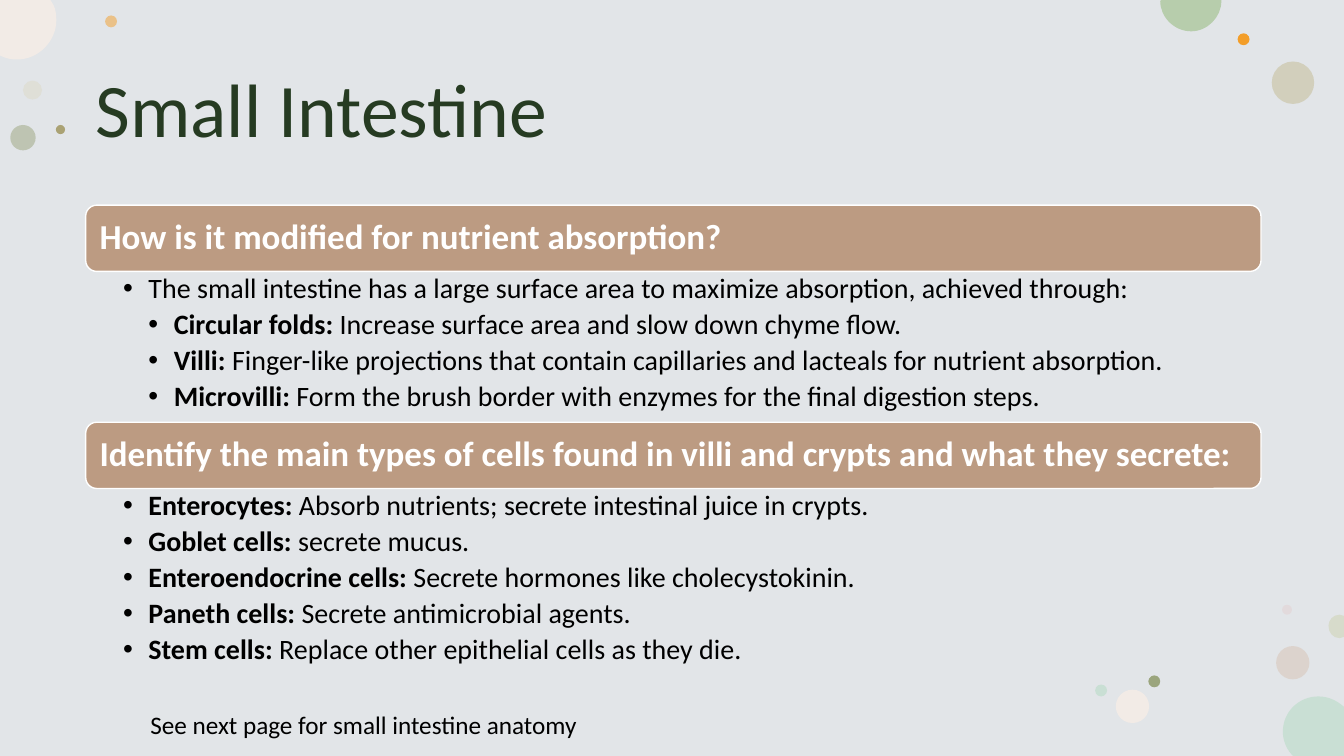
"""Build the Small Intestine slide: two headed lists among scattered dots."""
from dataclasses import dataclass

import lxml.etree
import pptx
import pptx.dml.color
import pptx.enum.shapes
import pptx.enum.text
import pptx.oxml.ns
import pptx.util

Cm, Pt = pptx.util.Cm, pptx.util.Pt
ANCHOR = pptx.enum.text.MSO_ANCHOR
SHAPE = pptx.enum.shapes.MSO_SHAPE
qn = pptx.oxml.ns.qn

TITLE = "Small Intestine"
NOTE = "See next page for small intestine anatomy"
SECTIONS = [
    ("How is it modified for nutrient absorption?", 3.8, [
        (0, "", "The small intestine has a large surface area to maximize absorption, achieved through:"),
        (1, "Circular folds:", "Increase surface area and slow down chyme flow."),
        (1, "Villi:", "Finger-like projections that contain capillaries and lacteals for nutrient absorption."),
        (1, "Microvilli:", "Form the brush border with enzymes for the final digestion steps."),
    ]),
    ("Identify the main types of cells found in villi and crypts and what they secrete:", 4.75, [
        (0, "Enterocytes:", "Absorb nutrients; secrete intestinal juice in crypts."),
        (0, "Goblet cells:", "secrete mucus."),
        (0, "Enteroendocrine cells:", "Secrete hormones like cholecystokinin."),
        (0, "Paneth cells:", "Secrete antimicrobial agents."),
        (0, "Stem cells:", "Replace other epithelial cells as they die."),
    ]),
]
DOTS = [
    (0.58, 2.03, 0.48, "DDDAC7", 50),
    (2.65, 0.39, 0.3, "F39E29", 50),
    (32.16, 16.28, 0.84, "D7C3B4", 50),
    (0.26, 3.15, 0.64, "9BA57D", 50),
    (32.05, 1.55, 1.07, "CCC7AC", 72),
    (31.19, 0.84, 0.3, "F39E29", 100),
    (32.31, 15.24, 0.25, "E3BEBE", 28),
    (28.94, 17.02, 0.3, "9BA57D", 100),
    (28.12, 17.38, 0.84, "F2EBE6", 100),
    (27.6, 17.25, 0.3, "C9DFD4", 100),
    (1.41, 3.15, 0.23, "AAA274", 100),
]
CUT_DOTS = [
    ("C9DFD4", (33.22, 17.55), [
        [(33.48, 17.55), (33.68, 17.65), (33.87, 17.81)],
        [(33.87, 19.05)], [(32.59, 19.05)], [(32.54, 19.0)],
        [(32.41, 18.85), (32.33, 18.64), (32.33, 18.44)],
        [(32.33, 17.93), (32.74, 17.55), (33.22, 17.55)]]),
    ("F2EBE6", (0, 0), [
        [(1.27, 0)], [(1.35, 0.13)],
        [(1.4, 0.23), (1.42, 0.36), (1.42, 0.51)],
        [(1.42, 1.04), (0.97, 1.5), (0.43, 1.5)],
        [(0.28, 1.5), (0.15, 1.47), (0.05, 1.42)], [(0, 1.4)]]),
    ("B7CDAC", (29.26, 0), [
        [(30.78, 0)], [(30.78, 0.03)],
        [(30.78, 0.43), (30.43, 0.79), (30.02, 0.79)],
        [(29.59, 0.79), (29.24, 0.43), (29.24, 0.03)]]),
    ("D7DBCB", (33.76, 15.49), [
        [(33.87, 15.52)], [(33.87, 16.05)], [(33.76, 16.08)],
        [(33.6, 16.08), (33.48, 15.95), (33.48, 15.77)],
        [(33.48, 15.62), (33.6, 15.49), (33.76, 15.49)]]),
]
WIDTH, HEIGHT = 33.87, 19.05
LEFT, SPAN = 2.16, 29.62
BAR_TOP, BAR_HEIGHT = 5.17, 1.67
INDENT = 0.64
NBSP = chr(160)


@dataclass(frozen=True)
class Theme:
    """Colours, font and type sizes."""
    font: str = "Calibri"
    back: str = "E2E5E8"
    title: str = "263B22"
    bar: str = "BC9B82"
    light: str = "FFFFFF"
    ink: str = "000000"
    title_size: int = 54
    bar_size: int = 25
    list_size: int = 20
    note_size: int = 18


THEME = Theme()


def rgb(value):
    """Turn a hex string into a colour."""
    return pptx.dml.color.RGBColor.from_string(value)


def paint(sp, color, line=None, alpha=100):
    """Fill a shape, with an optional outline and opacity in percent."""
    sp.shadow.inherit = False
    sp.fill.solid()
    sp.fill.fore_color.rgb = rgb(color)
    if line:
        sp.line.color.rgb = rgb(line)
        sp.line.width = Pt(1)
    else:
        sp.line.fill.background()
    if alpha < 100:
        clr = sp.fill._xPr.find(".//" + qn("a:srgbClr"))
        lxml.etree.SubElement(clr, qn("a:alpha"), val=str(alpha * 1000))


def add_shape(s, kind, left, top, width, height):
    """Add a preset shape measured in centimetres."""
    return s.shapes.add_shape(kind, *map(Cm, (left, top, width, height)))


def add_cut_dot(s, color, start, segments):
    """Add an outline whose three-point segments are Bézier curves."""
    builder = s.shapes.build_freeform(Cm(start[0]), Cm(start[1]))
    builder.add_line_segments([(Cm(x), Cm(y)) for seg in segments for x, y in seg], close=True)
    sp = builder.convert_to_shape()
    steps = iter(list(sp._element.iter(qn("a:lnTo"))))
    for seg in segments:
        first, *rest = [next(steps) for _ in seg]
        if rest:
            curve = lxml.etree.Element(qn("a:cubicBezTo"))
            first.addprevious(curve)
            for step in (first, *rest):
                curve.append(step[0])
                step.getparent().remove(step)
    paint(sp, color)


def write(tf, lines, size, color, bold=False, bullets=False, spacing=0.9, after=0,
          anchor=ANCHOR.TOP, insets=(0.25, 0.13, 0.25, 0.13), wrap=True):
    """Write lines of (level, bold lead, text) into a text frame."""
    tf.word_wrap = wrap
    tf.auto_size = pptx.enum.text.MSO_AUTO_SIZE.NONE
    tf.vertical_anchor = anchor
    tf.margin_left, tf.margin_top, tf.margin_right, tf.margin_bottom = map(Cm, insets)
    for i, (level, lead, text) in enumerate(lines):
        p = tf.paragraphs[0] if i == 0 else tf.add_paragraph()
        p.alignment = pptx.enum.text.PP_ALIGN.LEFT
        p.level = level
        p.line_spacing = spacing
        p.space_before, p.space_after = Pt(0), Pt(after)
        if bullets:
            pPr = p._p.get_or_add_pPr()
            pPr.set("marL", str(Cm(INDENT * (level + 1))))
            pPr.set("indent", str(-Cm(INDENT)))
            lxml.etree.SubElement(pPr, qn("a:buFont"), typeface="Arial")
            lxml.etree.SubElement(pPr, qn("a:buChar"), char="•")
        parts = [(lead, True), (NBSP + text, bold)] if lead else [(text, bold)]
        for part, heavy in parts:
            r = p.add_run()
            r.text = part
            r.font.name, r.font.size, r.font.bold = THEME.font, Pt(size), heavy
            r.font.color.rgb = rgb(color)


def place(sp, left, top, width, height):
    """Move and size a shape, in centimetres."""
    sp.left, sp.top, sp.width, sp.height = map(Cm, (left, top, width, height))


def main():
    """Build and save the slide."""
    prs = pptx.Presentation()
    prs.slide_width, prs.slide_height = Cm(WIDTH), Cm(HEIGHT)
    s = prs.slides.add_slide(prs.slide_layouts.get_by_name("Two Content"))
    title, *bodies = s.placeholders
    back = add_shape(s, SHAPE.RECTANGLE, 0, 0, WIDTH, HEIGHT)
    paint(back, THEME.back)
    title._element.addprevious(back._element)
    for left, top, size, color, alpha in DOTS:
        paint(add_shape(s, SHAPE.OVAL, left, top, size, size), color, alpha=alpha)
    for cut_dot in CUT_DOTS:
        add_cut_dot(s, *cut_dot)

    place(title, LEFT, 1.02, SPAN, 3.68)
    write(title.text_frame, [(0, "", TITLE)], THEME.title_size, THEME.title,
          anchor=ANCHOR.MIDDLE)

    top = BAR_TOP
    for body, (heading, list_height, lines) in zip(bodies, SECTIONS):
        bar = add_shape(s, SHAPE.ROUNDED_RECTANGLE, LEFT, top, SPAN, BAR_HEIGHT)
        paint(bar, THEME.bar, line=THEME.light)
        write(bar.text_frame, [(0, "", heading)], THEME.bar_size, THEME.light, bold=True,
              anchor=ANCHOR.MIDDLE, insets=(0.27, 0.13, 0.25, 0.16))
        top += BAR_HEIGHT
        place(body, LEFT, top, SPAN, list_height)
        write(body.text_frame, lines, THEME.list_size, THEME.ink, bullets=True,
              after=4, insets=(0.94, 0.08, 0.48, 0.08))
        top += list_height

    note = s.shapes.add_textbox(Cm(3.54), Cm(17.75), Cm(11.38), Cm(1.02))
    write(note.text_frame, [(0, "", NOTE)], THEME.note_size, THEME.ink,
          spacing=1.0, wrap=False)
    prs.save("out.pptx")


if __name__ == "__main__":
    main()
